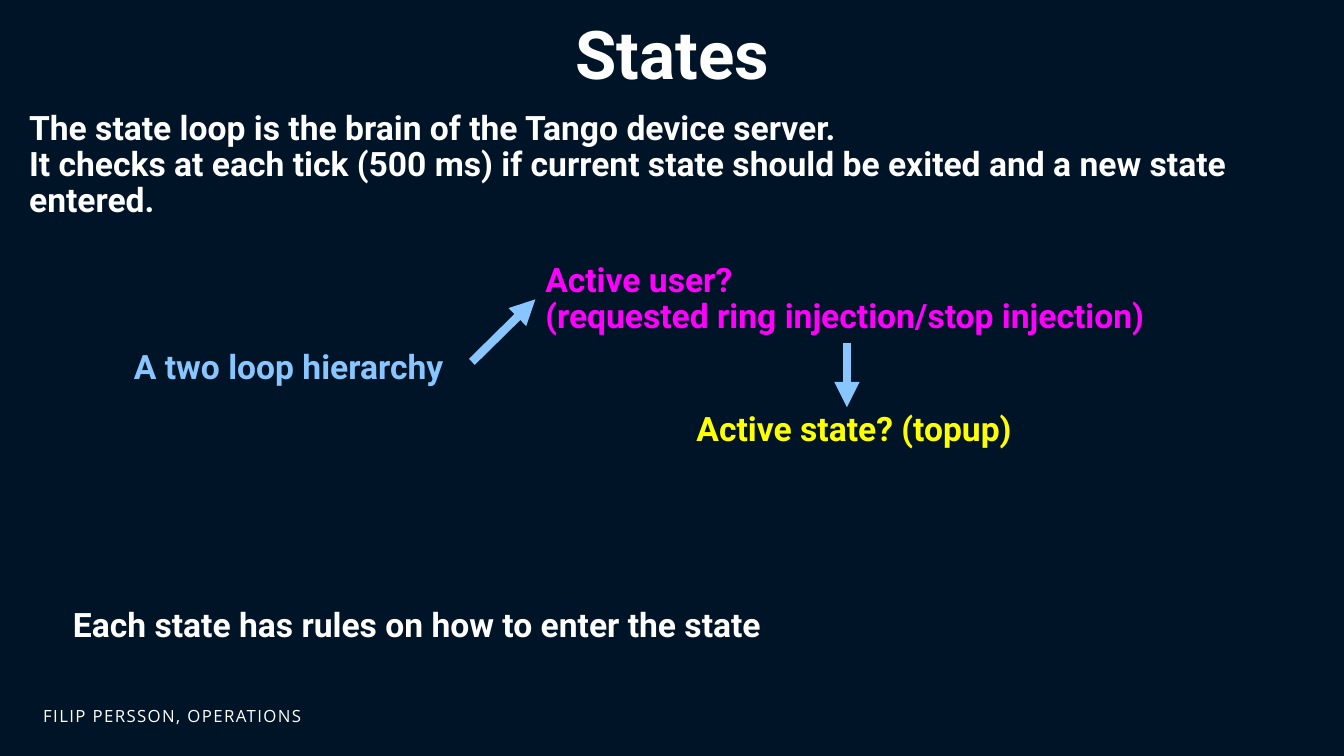
from lxml import etree
from pptx import Presentation, util as u
from pptx.dml.color import RGBColor
from pptx.enum import shapes, text
from pptx.oxml.ns import qn

NIGHT = RGBColor(0x00, 0x14, 0x27)
WHITE = RGBColor(0xFF, 0xFF, 0xFF)
SKY = RGBColor(0x89, 0xC6, 0xFF)
MAGENTA = RGBColor(0xFF, 0x00, 0xFF)
YELLOW = RGBColor(0xFF, 0xFF, 0x00)

CELL = 0.1  # side of a grid cell, in inches
LEFT, CENTER = text.PP_ALIGN.LEFT, text.PP_ALIGN.CENTER
TOP, BOTTOM = text.MSO_ANCHOR.TOP, text.MSO_ANCHOR.BOTTOM


def cells(*counts):
    """Turn counts of grid columns or rows into slide lengths."""
    return [u.Inches(count * CELL) for count in counts]


def write(frame, lines, color=WHITE, size=24, font="Roboto", bold=True,
          align=LEFT, anchor=BOTTOM, tracking=0):
    """Fill a text frame, one paragraph a line; tracking is in points."""
    frame.word_wrap = True
    frame.auto_size = text.MSO_AUTO_SIZE.SHAPE_TO_FIT_TEXT
    frame.vertical_anchor = anchor
    frame.text = "\n".join(lines)
    for paragraph in frame.paragraphs:
        paragraph.alignment = align
        paragraph.line_spacing = 0.9
        for run in paragraph.runs:
            run.font.name = font
            run.font.size = u.Pt(size)
            run.font.bold = bold
            run.font.color.rgb = color
            if tracking:
                run.font._element.set("spc", str(tracking * 100))


class StateSlide:
    def __init__(self, deck):
        self.slide = deck.slides.add_slide(deck.slide_layouts[5])
        fill = self.slide.background.fill
        fill.solid()
        fill.fore_color.rgb = NIGHT

    def title(self, wording, box):
        heading = self.slide.shapes.title
        heading.left, heading.top, heading.width, heading.height = cells(*box)
        write(heading.text_frame, [wording], size=48, align=CENTER)

    def label(self, box, *lines, **style):
        holder = self.slide.shapes.add_textbox(*cells(*box))
        write(holder.text_frame, lines, **style)

    def arrow(self, start, end):
        link = self.slide.shapes.add_connector(
            shapes.MSO_CONNECTOR.STRAIGHT, *cells(*start, *end))
        link.line.color.rgb = SKY
        link.line.width = u.Pt(6)
        etree.SubElement(link.line._get_or_add_ln(), qn("a:tailEnd"), type="triangle")
        etree.SubElement(link._element.spPr, qn("a:effectLst"))


def main():
    deck = Presentation()
    deck.slide_width, deck.slide_height = u.Inches(13.33), u.Inches(7.5)
    states = StateSlide(deck)

    states.title("States", (9.2, 1.2, 115, 8.6))
    states.label((3.3, 69.7, 56.5, 2.8), "FILIP PERSSON, OPERATIONS", size=12,
                 font="Open Sans", bold=False, anchor=TOP, tracking=1)
    states.label((3.3, 59.9, 76.1, 4.6),
                 "Each state has rules on how to enter the state", align=CENTER)
    states.label((1.9, 10.4, 127.9, 11.9),
                 "The state loop is the brain of the Tango device server.",
                 "It checks at each tick (500 ms) if current state should be exited "
                 "and a new state entered.")

    states.label((12.3, 34.3, 38.6, 4.6), "A two loop hierarchy", color=SKY)
    states.label((53.1, 25.5, 67.3, 8.3), "Active user?",
                 "(requested ring injection/stop injection)", color=MAGENTA)
    states.label((68.1, 40.4, 36, 4.6), "Active state? (topup)", color=YELLOW)
    states.arrow((46.8, 35.9), (53.1, 29.7))
    states.arrow((84, 34), (84, 40.4))

    deck.save("out.pptx")


if __name__ == "__main__":
    main()
